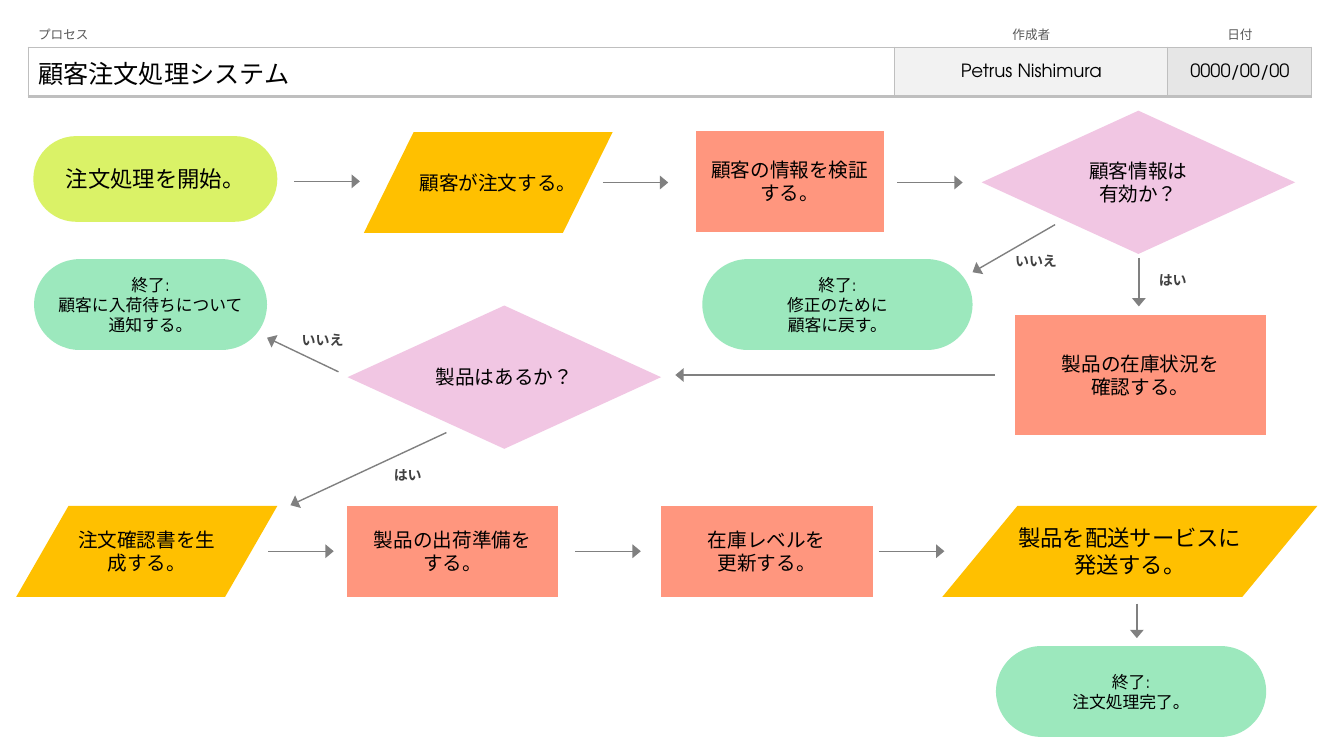
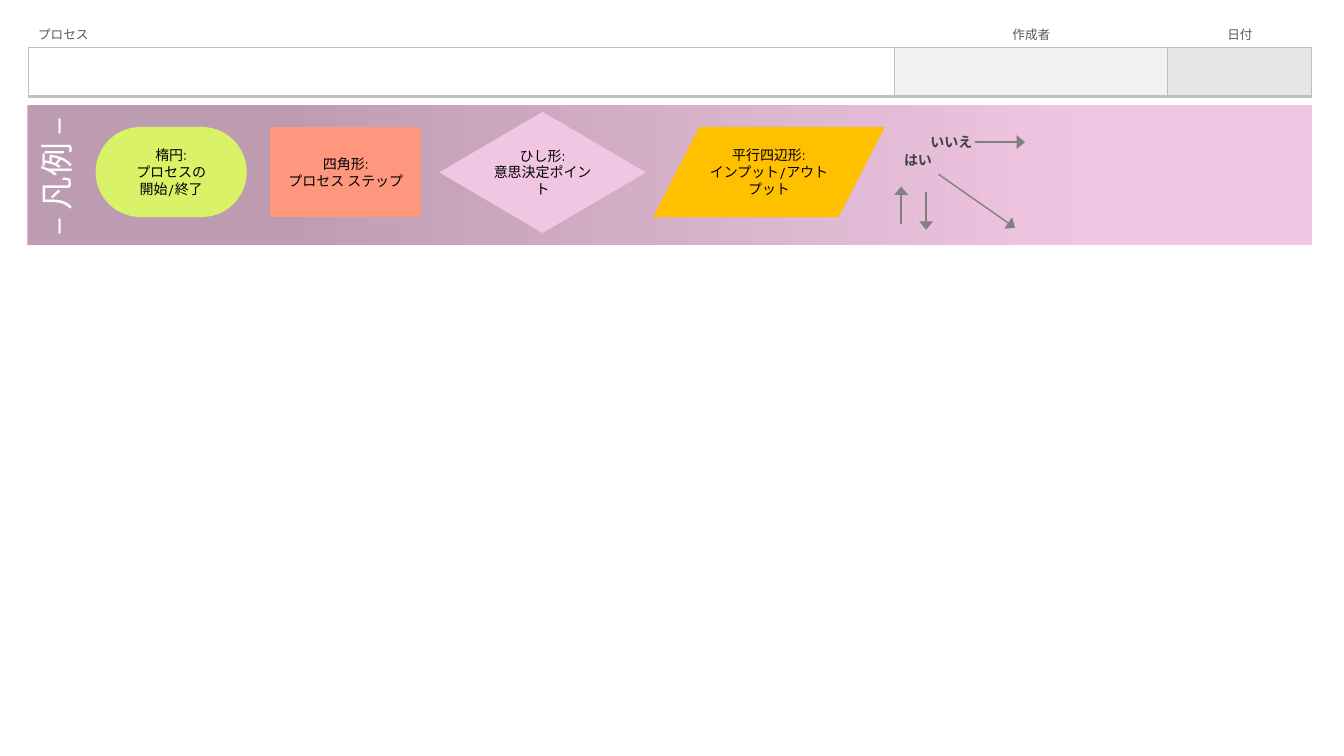
from pptx import Presentation
from pptx.dml.color import RGBColor
from pptx.enum.dml import MSO_LINE
from pptx.enum.lang import MSO_LANGUAGE_ID
from pptx.enum.shapes import MSO_CONNECTOR, MSO_SHAPE
from pptx.enum.text import MSO_ANCHOR, PP_ALIGN
from pptx.oxml.ns import qn
from pptx.util import Cm, Pt
from lxml.etree import SubElement

FONT = "TeX Gyre Adventor"
EDGE, GRAY = "BFBFBF", "808080"
PINK, MAUVE = "F1C6E3", "BD9CB1"
hue = RGBColor.from_string

# kind: preset shape, fill, inner margin in cm
KINDS = {
    "start": (MSO_SHAPE.ROUNDED_RECTANGLE, "DAF267", 0.05),
    "end": (MSO_SHAPE.ROUNDED_RECTANGLE, "9CE8BD", 0.05),
    "step": (MSO_SHAPE.FLOWCHART_PROCESS, "FF967E", 0.05),
    "test": (MSO_SHAPE.FLOWCHART_DECISION, PINK, 0),
    "data": (MSO_SHAPE.FLOWCHART_DATA, "FFC000", 0),
}

# Header columns: caption, width, fill, alignment, left margin, value size
HEAD = [
    ("プロセス", 21.84, "FFFFFF", PP_ALIGN.LEFT, 0.25, 18),
    ("作成者", 6.88, "F2F2F2", PP_ALIGN.CENTER, 0.03, 13),
    ("日付", 3.63, "E6E6E6", PP_ALIGN.CENTER, 0.03, 13),
]


def write(frame, text, size=14, color="000000", bold=False,
          align=PP_ALIGN.CENTER):
    """Fill a text frame; newline starts a paragraph, \\v breaks a line."""
    frame.word_wrap = True
    frame.text = text
    for para in frame.paragraphs:
        para.alignment = align
        for run in para.runs:
            font = run.font
            font.name, font.size, font.bold = FONT, Pt(size), bold
            font.color.rgb = hue(color)
            font.language_id = MSO_LANGUAGE_ID.JAPANESE


def border(cell, **sides):
    """Draw cell borders, given as side=points in the order L, R, T, B."""
    props = cell._tc.get_or_add_tcPr()
    for side, width in sides.items():
        line = SubElement(props, qn(f"a:ln{side}"), w=str(Pt(width)))
        fill = SubElement(line, qn("a:solidFill"))
        SubElement(fill, qn("a:srgbClr"), val=EDGE)


# Each node: kind, left, top, width, height, text size, text
flow = {
    "values": ["顧客注文処理システム", "Petrus Nishimura", "0000/00/00"],
    "nodes": [
        ("start", 0.84, 3.43, 6.15, 2.16, 16, "注文処理を開始。"),
        ("data", 9.17, 3.33, 6.27, 2.54, 14, "顧客が注文する。"),
        ("step", 17.53, 3.3, 4.75, 2.54, 14, "顧客の情報を検証\vする。"),
        ("test", 24.74, 2.79, 7.9, 3.61, 14, "顧客情報は\v有効か？"),
        ("end", 17.7, 6.53, 6.81, 2.29, 12,
         "終了:\n修正のために\n顧客に戻す。"),
        ("step", 25.58, 7.95, 6.32, 3.02, 14, "製品の在庫状況を\v確認する。"),
        ("test", 8.76, 7.7, 7.9, 3.61, 14, "製品はあるか？"),
        ("end", 0.86, 6.53, 5.87, 2.29, 12,
         "終了:\n顧客に入荷待ちについて\v通知する。"),
        ("data", 0.41, 12.75, 6.58, 2.29, 14, "注文確認書を生成する。"),
        ("step", 8.74, 12.75, 5.33, 2.29, 14, "製品の出荷準備を\vする。"),
        ("step", 16.66, 12.75, 5.33, 2.29, 14, "在庫レベルを\n更新する。"),
        ("data", 23.75, 12.75, 9.45, 2.29, 16,
         "製品を配送サービスに\n発送する。"),
        ("end", 25.1, 16.28, 6.81, 2.29, 12, "終了:\n注文処理完了。"),
    ],
    "arrows": [
        (28.7, 6.5, 28.7, 7.72),
        (26.59, 5.66, 24.51, 6.86),
        (25.07, 9.45, 17.02, 9.45),
        (8.53, 9.37, 6.73, 8.51),
        (11.25, 10.9, 7.32, 12.73),
        (28.65, 15.21, 28.65, 16.08),
    ] + [(x, y, x + 1.65, y) for x, y in [
        (7.42, 4.57), (15.19, 4.6), (22.61, 4.6),
        (6.76, 13.89), (14.5, 13.89), (22.15, 13.89)]],
    "labels": [
        (25.07, 6.02, 2.08, "いいえ"), (28.83, 6.5, 1.45, "はい"),
        (7.09, 8.03, 2.08, "いいえ"), (9.55, 11.43, 1.45, "はい"),
    ],
}
legend = {
    "values": ["", "", ""],
    "nodes": [
        ("start", 2.41, 3.2, 3.81, 2.27, 10, "楕円:\nプロセスの\n開始/終了"),
        ("step", 6.81, 3.2, 3.81, 2.27, 10, "四角形:\nプロセス ステップ"),
        ("test", 11.07, 2.82, 5.21, 3.05, 10, "ひし形:\n意思決定ポイント"),
        ("data", 16.46, 3.2, 5.84, 2.27, 10,
         "平行四辺形:\nインプット/アウトプット"),
    ],
    "arrows": [
        (23.65, 4.39, 25.58, 5.74),
        (24.56, 3.58, 25.83, 3.58),
        (22.71, 5.64, 22.71, 4.7),
        (23.34, 4.83, 23.34, 5.79),
    ],
    "labels": [(22.35, 3.48, 1.57, "はい"), (23.19, 3.02, 1.57, "いいえ")],
}

deck = Presentation()
deck.slide_width, deck.slide_height = Cm(33.87), Cm(19.05)
blank = deck.slide_layouts[6]
first, second = [deck.slides.add_slide(blank) for _ in range(2)]

# Legend band with its upright heading
band = second.shapes.add_shape(
    MSO_SHAPE.RECTANGLE, Cm(0.69), Cm(2.64), Cm(32.38), Cm(3.53))
band.shadow.inherit = False
band.line.fill.background()
band.fill.gradient()
band.fill.gradient_angle = 0
for stop, spot, color in zip(band.fill.gradient_stops, (0.19, 0.84),
                             (MAUVE, PINK)):
    stop.position = spot
    stop.color.rgb = hue(color)
side = second.shapes.add_textbox(Cm(-0.61), Cm(3.81), Cm(4.06), Cm(1.27))
side.rotation = 270
side.text_frame.vertical_anchor = MSO_ANCHOR.MIDDLE
write(side.text_frame, "– 凡例 –", size=24, color="FFFFFF")

for slide, part in [(first, flow), (second, legend)]:
    shapes = slide.shapes

    # Header table
    table = shapes.add_table(
        2, 3, Cm(0.71), Cm(0.48), Cm(32.35), Cm(1.95)).table
    table.first_row = table.horz_banding = False
    table.rows[0].height, table.rows[1].height = Cm(0.71), Cm(1.24)
    for col, (name, width, color, align, left, size) in enumerate(HEAD):
        table.columns[col].width = Cm(width)
        top, low = table.cell(0, col), table.cell(1, col)
        for cell in (top, low):
            cell.vertical_anchor = MSO_ANCHOR.MIDDLE
            cell.margin_left = Cm(left)
            cell.margin_right = cell.margin_top = Cm(0.03)
            cell.margin_bottom = 0
        border(top, B=1)
        top.fill.background()
        border(low, L=1, R=1, T=1, B=2.25)
        low.fill.solid()
        low.fill.fore_color.rgb = hue(color)
        write(top.text_frame, name, size=9, color="595959", align=align)
        write(low.text_frame, part["values"][col], size=size, align=align)

    # Arrows
    for x1, y1, x2, y2 in part["arrows"]:
        arrow = shapes.add_connector(
            MSO_CONNECTOR.STRAIGHT, Cm(x1), Cm(y1), Cm(x2), Cm(y2))
        arrow.line.width = Pt(1)
        arrow.line.color.rgb = hue(GRAY)
        arrow.line.dash_style = MSO_LINE.SOLID
        SubElement(arrow.line._get_or_add_ln(), qn("a:tailEnd"),
                   type="triangle", w="lg", len="med")
        SubElement(arrow._element.spPr, qn("a:effectLst"))

    # Flowchart nodes
    for kind, x, y, w, h, size, text in part["nodes"]:
        preset, color, pad = KINDS[kind]
        node = shapes.add_shape(preset, Cm(x), Cm(y), Cm(w), Cm(h))
        if preset == MSO_SHAPE.ROUNDED_RECTANGLE:
            node.adjustments[0] = 0.5
        node.shadow.inherit = False
        node.fill.solid()
        node.fill.fore_color.rgb = hue(color)
        node.line.fill.background()
        frame = node.text_frame
        frame.margin_left = frame.margin_right = Cm(pad)
        frame.margin_top = frame.margin_bottom = Cm(pad)
        frame.vertical_anchor = MSO_ANCHOR.MIDDLE
        write(frame, text, size=size)

    # Yes and no labels
    for x, y, w, text in part["labels"]:
        frame = shapes.add_textbox(Cm(x), Cm(y), Cm(w), Cm(1.09)).text_frame
        frame.margin_left = frame.margin_right = Cm(0.05)
        frame.margin_top = frame.margin_bottom = Cm(0.05)
        frame.vertical_anchor = MSO_ANCHOR.MIDDLE
        write(frame, text, size=10, color="404040", bold=True)

deck.save("out.pptx")
